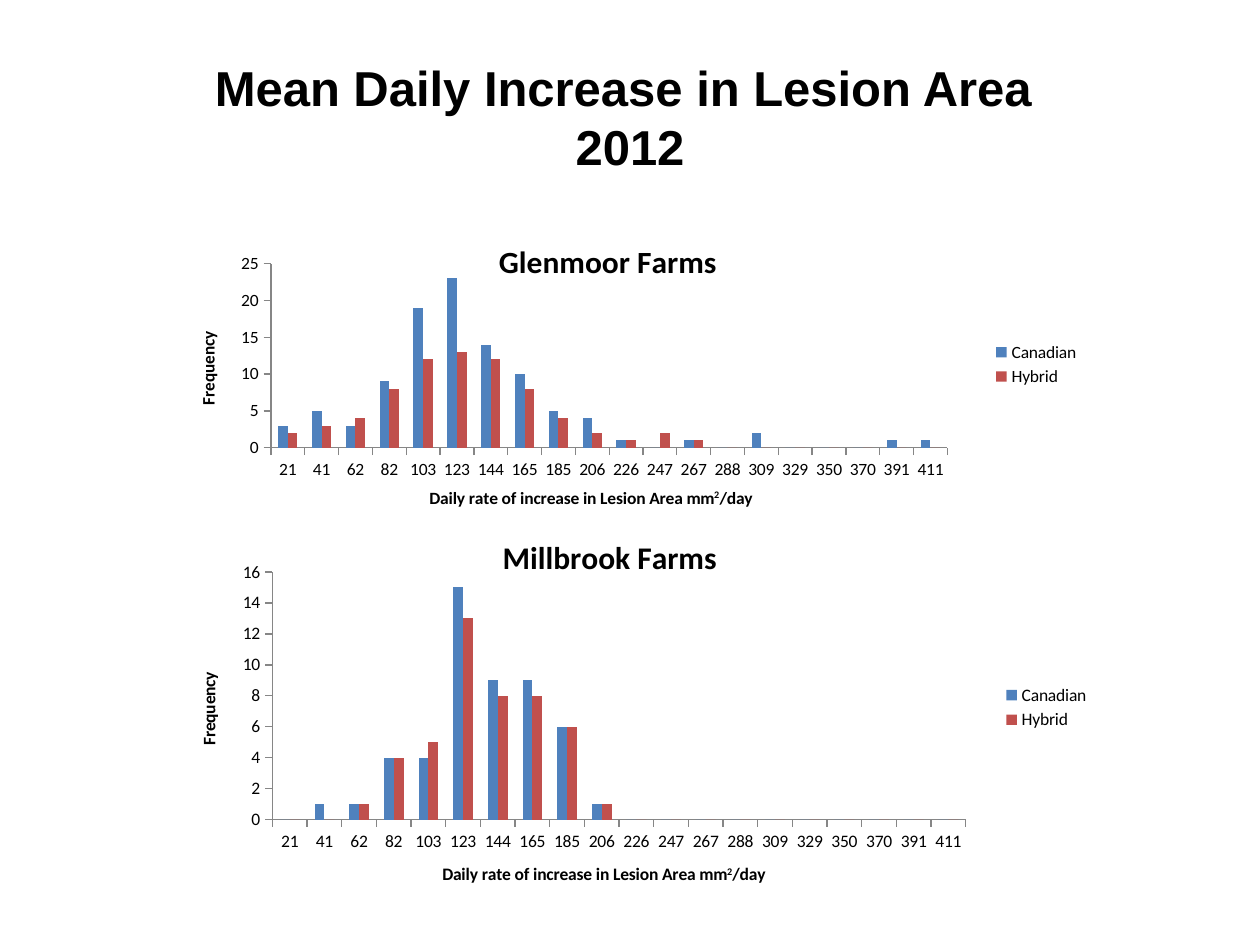
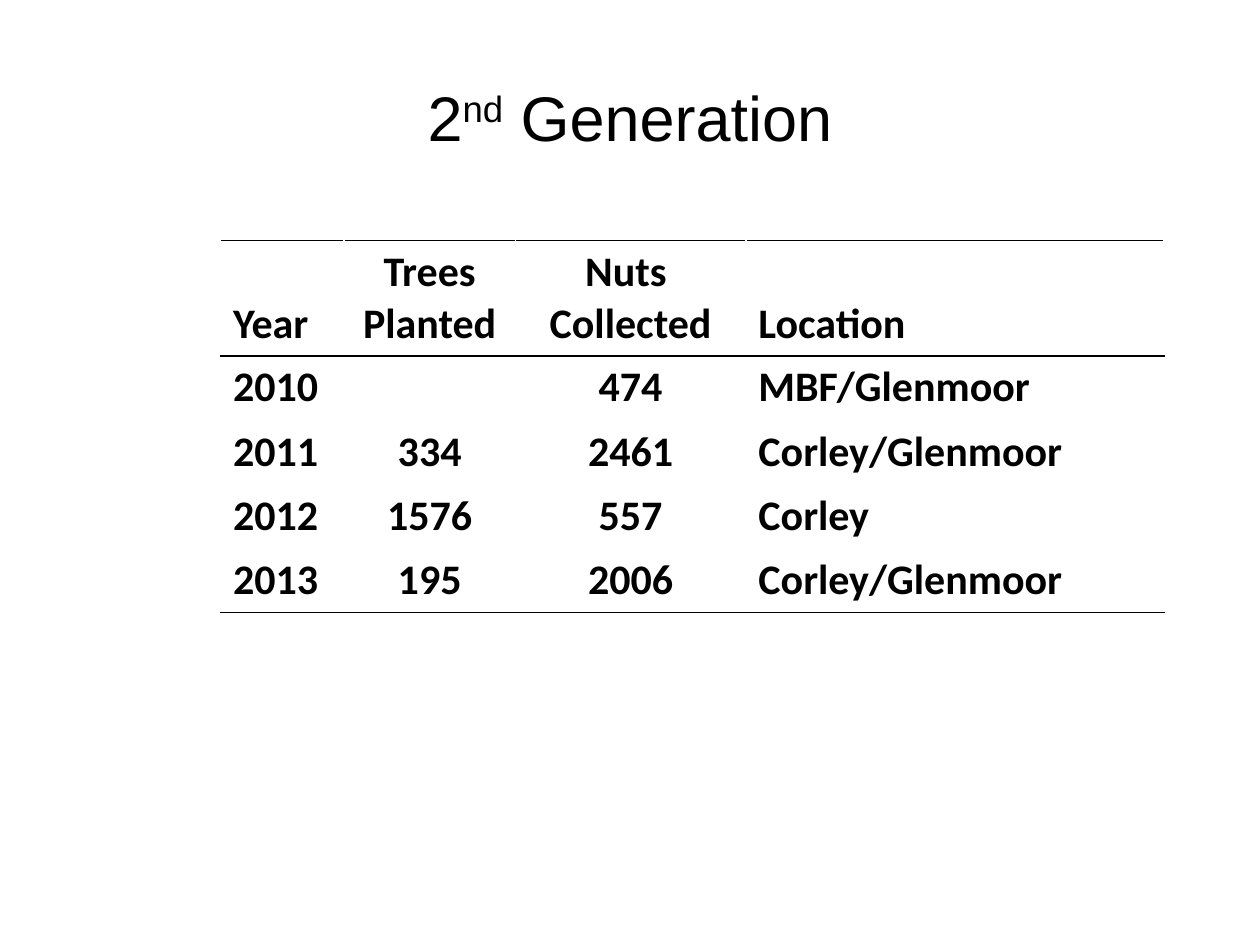
import pptx
import pptx.chart.data
import pptx.dml.color
import pptx.enum.chart
import pptx.enum.text
import pptx.oxml
import pptx.util
from pptx.util import Inches, Pt

BLACK = pptx.dml.color.RGBColor(0x00, 0x00, 0x00)
WHITE = pptx.dml.color.RGBColor(0xFF, 0xFF, 0xFF)
AXIS_GRAY = pptx.dml.color.RGBColor(0x86, 0x86, 0x86)
BLUE = pptx.dml.color.RGBColor(0x4F, 0x81, 0xBD)
RED = pptx.dml.color.RGBColor(0xC0, 0x50, 0x4D)
SERIES_COLORS = {"Canadian": BLUE, "Hybrid": RED}

TITLE_FONT = "Arial"
BODY_FONT = "Calibri"
ALIGN = pptx.enum.text.PP_ALIGN
ANCHOR = pptx.enum.text.MSO_ANCHOR

GROWTH_RATES = ["21", "41", "62", "82", "103", "123", "144", "165", "185", "206",
                "226", "247", "267", "288", "309", "329", "350", "370", "391", "411"]


def parse_xml(text):
    namespaces = " ".join(pptx.oxml.ns.nsdecls(prefix) for prefix in "ac")
    return pptx.oxml.parse_xml(text.replace(">", f" {namespaces}>", 1))


def add_runs(paragraph, text):
    """Fill a paragraph; text between ^ marks is raised, \\v breaks the line."""
    for index, part in enumerate(text.split("^")):
        for line_number, line in enumerate(part.split("\v")):
            if line_number:
                paragraph.add_line_break()
            run = paragraph.add_run()
            run.text = line
            if index % 2:
                run._r.get_or_add_rPr().set("baseline", "30000")


def chart_layout(x, y, width=None, height=None):
    """Manual layout in fractions of the chart; with a size, the inner plot area."""
    inner = '<c:layoutTarget val="inner"/>' if width else ""
    size = f'<c:w val="{width}"/><c:h val="{height}"/>' if width else ""
    return parse_xml(
        f'<c:layout><c:manualLayout>{inner}<c:xMode val="edge"/><c:yMode val="edge"/>'
        f'<c:x val="{x}"/><c:y val="{y}"/>{size}</c:manualLayout></c:layout>')


def set_layout(element, layout):
    for old_layout in element.findall(pptx.oxml.ns.qn("c:layout")):
        element.remove(old_layout)
    text = element.find(pptx.oxml.ns.qn("c:tx"))
    element.insert(0 if text is None else 1, layout)


class Deck:
    def __init__(self):
        self.presentation = pptx.Presentation()
        self.presentation.slide_width = Inches(10)
        self.presentation.slide_height = Inches(7.5)
        self.slide = None

    def style(self, font, size, bold=False, name=BODY_FONT):
        font.name = name
        font.size = Pt(size)
        font.bold = bold
        font.color.rgb = BLACK

    def add_slide(self, title, size, bold=False):
        self.slide = self.presentation.slides.add_slide(self.presentation.slide_layouts[5])
        shape = self.slide.shapes.title
        shape.left, shape.top = Inches(0.5), Inches(0.3)
        shape.width, shape.height = Inches(9), Inches(1.25)
        shape.text_frame.vertical_anchor = ANCHOR.MIDDLE
        paragraph = shape.text_frame.paragraphs[0]
        paragraph.alignment = ALIGN.CENTER
        self.style(paragraph.font, size, bold, TITLE_FONT)
        add_runs(paragraph, title)

    def chart_title(self, owner, text, size, position):
        """Title a chart or an axis at a fixed position."""
        title = owner.chart_title if hasattr(owner, "chart_title") else owner.axis_title
        paragraph = title.text_frame.paragraphs[0]
        self.style(paragraph.font, size, bold=True)
        add_runs(paragraph, text)
        set_layout(title._element, chart_layout(*position))
        return title

    def add_histogram(self, farm, frame, counts, maximum, step, plot,
                      title_at, rate_at, frequency_at):
        data = pptx.chart.data.CategoryChartData()
        data.categories = GROWTH_RATES
        for name, values in zip(SERIES_COLORS, counts):
            data.add_series(name, values)
        chart = self.slide.shapes.add_chart(
            pptx.enum.chart.XL_CHART_TYPE.COLUMN_CLUSTERED, *map(Inches, frame), data).chart
        self.style(chart.font, 10)

        title = self.chart_title(chart, farm, 18, title_at)
        title.include_in_layout = True
        chart.has_legend = True
        chart.legend.position = pptx.enum.chart.XL_LEGEND_POSITION.RIGHT
        chart.legend.include_in_layout = False

        columns = chart.plots[0]
        columns.gap_width = 150
        columns.overlap = 0
        columns.vary_by_categories = False
        for series in columns.series:
            series.format.fill.solid()
            series.format.fill.fore_color.rgb = SERIES_COLORS[series.name]

        self.chart_title(chart.category_axis, "Daily rate of increase in Lesion Area mm^2^/day",
                         10, rate_at)
        frequency = self.chart_title(chart.value_axis, "Frequency", 10, frequency_at)
        frequency.text_frame._txBody.bodyPr.set("rot", "-5400000")
        frequency.text_frame._txBody.bodyPr.set("vert", "horz")
        for axis in (chart.category_axis, chart.value_axis):
            axis.has_major_gridlines = False
            axis.major_tick_mark = pptx.enum.chart.XL_TICK_MARK.OUTSIDE
            axis.format.line.color.rgb = AXIS_GRAY
        chart.value_axis.minimum_scale = 0
        chart.value_axis.maximum_scale = maximum
        chart.value_axis.major_unit = step
        set_layout(chart._chartSpace.chart.plotArea, chart_layout(*plot))

    def add_border(self, cell, side, color):
        cell._tc.get_or_add_tcPr().append(parse_xml(
            f'<a:ln{side} w="12700"><a:solidFill><a:srgbClr val="{color}"/>'
            f'</a:solidFill></a:ln{side}>'))

    def add_table(self, rows, left, top, widths, alignments, header_height, row_height):
        heights = [header_height] + [row_height] * (len(rows) - 1)
        table = self.slide.shapes.add_table(
            len(rows), len(widths), Inches(left), Inches(top),
            Inches(sum(widths)), Inches(sum(heights))).table
        table.horz_banding = False
        for column, width in zip(table.columns, widths):
            column.width = Inches(width)
        ruled_edges = {0, 1, len(rows)}
        for row_number, (row, height) in enumerate(zip(rows, heights)):
            table.rows[row_number].height = Inches(height)
            edges = {"L": None, "R": None, "T": row_number, "B": row_number + 1}
            for column_number, text in enumerate(row):
                cell = table.cell(row_number, column_number)
                for side, edge in edges.items():
                    self.add_border(cell, side, BLACK if edge in ruled_edges else WHITE)
                cell.fill.background()
                cell.vertical_anchor = ANCHOR.BOTTOM if row_number == 0 else ANCHOR.TOP
                cell.text = text
                for paragraph in cell.text_frame.paragraphs:
                    paragraph.alignment = alignments[column_number]
                    self.style(paragraph.font, 24, bold=True)


def main():
    deck = Deck()

    deck.add_slide("Mean Daily Increase in Lesion Area \v2012", 28, bold=True)
    deck.add_histogram(
        "Glenmoor Farms", (1, 1.75, 7.67, 2.33),
        [(3, 5, 3, 9, 19, 23, 14, 10, 5, 4, 1, 0, 1, 0, 2, 0, 0, 0, 1, 1),
         (2, 3, 4, 8, 12, 13, 12, 8, 4, 2, 1, 2, 1, 0, 0, 0, 0, 0, 0, 0)],
        maximum=25, step=5, plot=(0.15, 0.15, 0.7, 0.64),
        title_at=(0.38, 0.05), rate_at=(0.31, 0.91), frequency_at=(0.07, 0.38))
    deck.add_histogram(
        "Millbrook Farms", (1, 4.08, 7.75, 3.07),
        [(0, 1, 1, 4, 4, 15, 9, 9, 6, 1) + (0,) * 10,
         (0, 0, 1, 4, 5, 13, 8, 8, 6, 1) + (0,) * 10],
        maximum=16, step=2, plot=(0.15, 0.15, 0.71, 0.64),
        title_at=(0.38, 0.04), rate_at=(0.32, 0.89), frequency_at=(0.07, 0.4))

    deck.add_slide("2^nd^ Generation", 36)
    deck.add_table(
        [("Year", "Trees Planted", "Nuts \nCollected", "Location"),
         ("2010", "", "474", "MBF/Glenmoor"),
         ("2011", "334", "2461", "Corley/Glenmoor"),
         ("2012", "1576", "557", "Corley"),
         ("2013", "195", "2006", "Corley/Glenmoor")],
        left=1.75, top=1.91, widths=(0.98, 1.36, 1.83, 3.32),
        alignments=(ALIGN.JUSTIFY, ALIGN.CENTER, ALIGN.CENTER, ALIGN.LEFT),
        header_height=0.91, row_height=0.51)

    deck.presentation.save("out.pptx")


if __name__ == "__main__":
    main()
